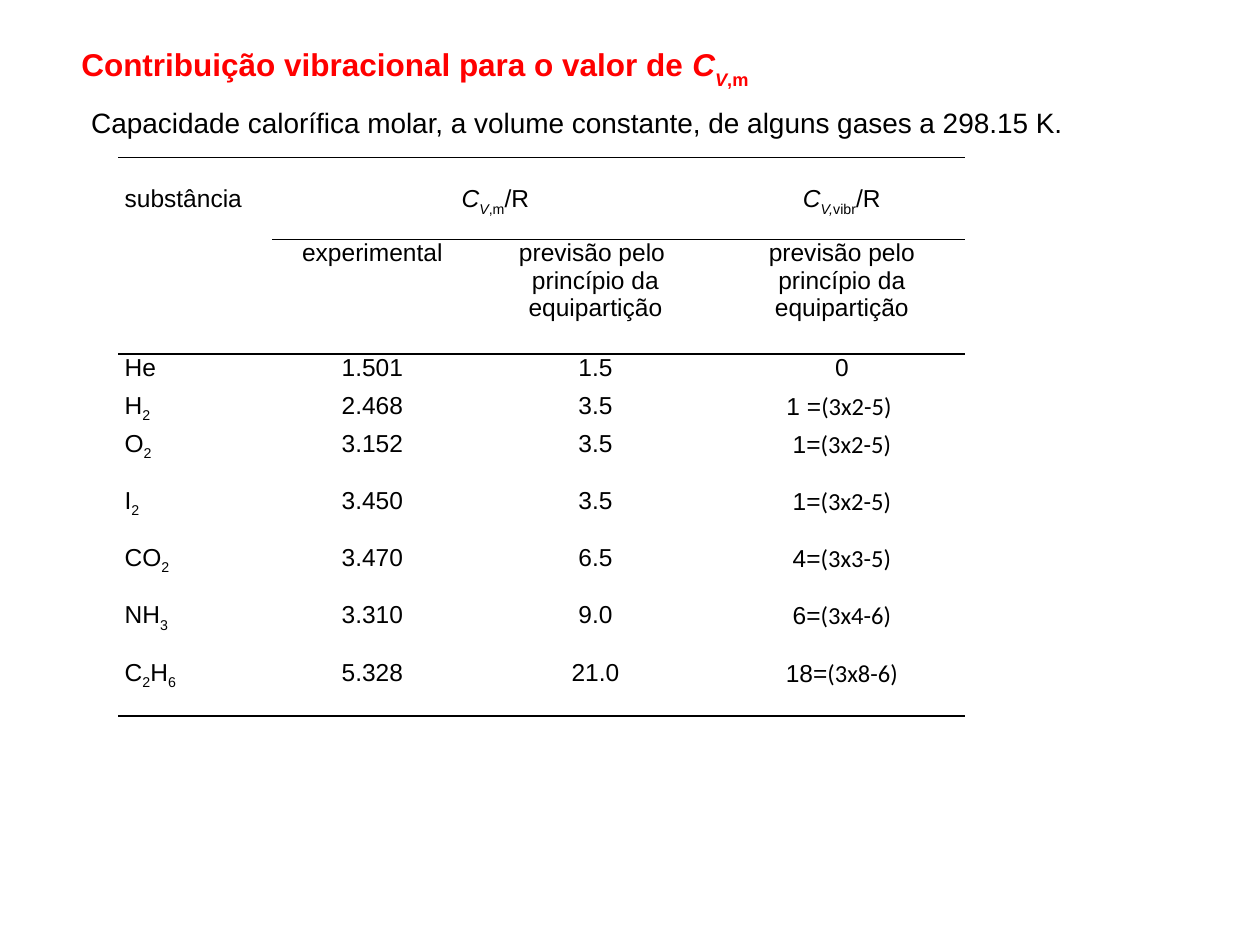
from itertools import groupby

from lxml.etree import SubElement
from pptx import Presentation
from pptx.dml.color import RGBColor
from pptx.enum.text import MSO_ANCHOR, PP_ALIGN
from pptx.oxml.ns import qn
from pptx.util import Pt

BLACK = RGBColor(0, 0, 0)
RED = RGBColor(255, 0, 0)
NO_STYLE = "{2D5ABB26-0587-4C30-8999-92F81FD0307C}"

# A span is (text, format values); "baseline" is in thousandths of a percent.
ITALIC = {"italic": True}
SUB = {"baseline": -25000}
CALIBRI = {"name": "Calibri"}

TITLE = [("Contribuição vibracional para o valor de ", {}), ("C", ITALIC),
         ("V", {"italic": True, "baseline": -30000}), (",m", {"baseline": -30000})]
SUBTITLE = [("Capacidade calorífica molar, a volume constante, "
             "de alguns gases a 298.15 K.", {})]

MEASURED = [("C", ITALIC), ("V", ITALIC | SUB), (",m", SUB), ("/R", {})]
VIBRATIONAL = [("C", ITALIC), ("V,", ITALIC | SUB), ("vibr", SUB), ("/R", {})]
PRINCIPLE = [("princípio da equipartição", {})]

GASES = [  # formula, experimental, predicted, vibrational value, its count
    ("He", "1.501", "1.5", "0", ""),
    ("H2", "2.468", "3.5", "1 =", "(3x2-5) "),
    ("O2", "3.152", "3.5", "1=", "(3x2-5)"),
    ("I2", "3.450", "3.5", "1=", "(3x2-5)"),
    ("CO2", "3.470", "6.5", "4=", "(3x3-5)"),
    ("NH3", "3.310", "9.0", "6=", "(3x4-6)"),
    ("C2H6", "5.328", "21.0", "18=", "(3x8-6)"),
]

COLUMN_WIDTHS = [88, 114.4, 140.6, 141]
ROW_HEIGHTS = [46.8, 65.6] + [21.7] * 2 + [32.7] * 5
TABLE_LEFT, TABLE_TOP = 67.6, 90
HEADER_DROP = 16.1


def formula_spans(formula):
    """Digits of a chemical formula become subscripts."""
    return [("".join(chars), SUB if is_digit else {})
            for is_digit, chars in groupby(formula, str.isdigit)]


def write(frame, paragraphs, align, **base):
    for index, spans in enumerate(paragraphs):
        para = frame.paragraphs[0] if index == 0 else frame.add_paragraph()
        para.alignment = align
        for text, changes in spans:
            span = para.add_run()
            span.text = text
            values = {"name": "Arial", "color": BLACK} | base | changes
            span.font.color.rgb = values.pop("color")
            baseline = values.pop("baseline", None)
            for name, value in values.items():
                setattr(span.font, name, value)
            if baseline:
                span.font._element.set("baseline", str(baseline))


def add_text(page, place, spans, align, wrap, anchor, **base):
    box = page.shapes.add_textbox(*map(Pt, place))
    box.text_frame.word_wrap = wrap
    box.text_frame.vertical_anchor = anchor
    write(box.text_frame, [spans], align, **base)


def set_borders(cell, top, bottom):
    properties = cell._tc.get_or_add_tcPr()
    sides = (("lnL", False), ("lnR", False), ("lnT", top), ("lnB", bottom))
    for index, (side, visible) in enumerate(sides):
        line = SubElement(properties, qn(f"a:{side}"), w=str(Pt(1)))
        properties.insert(index, line)
        if visible:
            fill = SubElement(line, qn("a:solidFill"))
            SubElement(fill, qn("a:srgbClr"), val=str(BLACK))
        else:
            SubElement(line, qn("a:noFill"))


def table_rows():
    """Each cell is a list of paragraphs; None is covered by a merged cell."""
    yield [[[("substância", {})]], [MEASURED], None, [VIBRATIONAL]]
    yield [None, [[("experimental", {})]],
           [[("previsão pelo ", {})], PRINCIPLE],
           [[(" previsão pelo ", {})], PRINCIPLE]]
    for formula, measured, predicted, value, count in GASES:
        vibration = [(value, {})] + ([(count, CALIBRI)] if count else [])
        yield [[formula_spans(formula)], [[(measured, {})]],
               [[(predicted, {})]], [vibration]]


def add_gas_table(page):
    place = (TABLE_LEFT, TABLE_TOP, sum(COLUMN_WIDTHS), sum(ROW_HEIGHTS))
    graphic = page.shapes.add_table(len(ROW_HEIGHTS), len(COLUMN_WIDTHS),
                                    *map(Pt, place))
    table = graphic.table
    table.first_row = table.horz_banding = False
    table._tbl.tblPr.find(qn("a:tableStyleId")).text = NO_STYLE
    for column, width in zip(table.columns, COLUMN_WIDTHS):
        column.width = Pt(width)
    for row, height in zip(table.rows, ROW_HEIGHTS):
        row.height = Pt(height)
    table.cell(0, 0).merge(table.cell(1, 0))
    table.cell(0, 1).merge(table.cell(0, 2))

    last = len(ROW_HEIGHTS) - 1
    for r, contents in enumerate(table_rows()):
        for c, paragraphs in enumerate(contents):
            cell = table.cell(r, c)
            cell.fill.background()
            margins = {"left": 3.6, "right": 3.6, "bottom": 0,
                       "top": HEADER_DROP if r == 0 else 0}
            for side, size in margins.items():
                setattr(cell, f"margin_{side}", Pt(size))
            inside_merge = c == 0
            set_borders(cell,
                        top=r in (0, 2) or (r == 1 and not inside_merge),
                        bottom=r in (1, last) or (r == 0 and not inside_merge))
            if paragraphs:
                align = PP_ALIGN.LEFT if c == 0 else PP_ALIGN.CENTER
                write(cell.text_frame, paragraphs, align, size=Pt(14))


def main():
    deck = Presentation()
    deck.slide_width, deck.slide_height = Pt(720), Pt(540)
    page = deck.slides.add_slide(deck.slide_layouts[6])
    add_gas_table(page)
    add_text(page, (45, 56.5, 577, 26.6), SUBTITLE, PP_ALIGN.LEFT, False,
             MSO_ANCHOR.MIDDLE, size=Pt(16))
    add_text(page, (39.4, 22.4, 500, 29), TITLE, PP_ALIGN.JUSTIFY, True,
             MSO_ANCHOR.TOP, size=Pt(18), bold=True, color=RED)
    deck.save("out.pptx")


if __name__ == "__main__":
    main()
